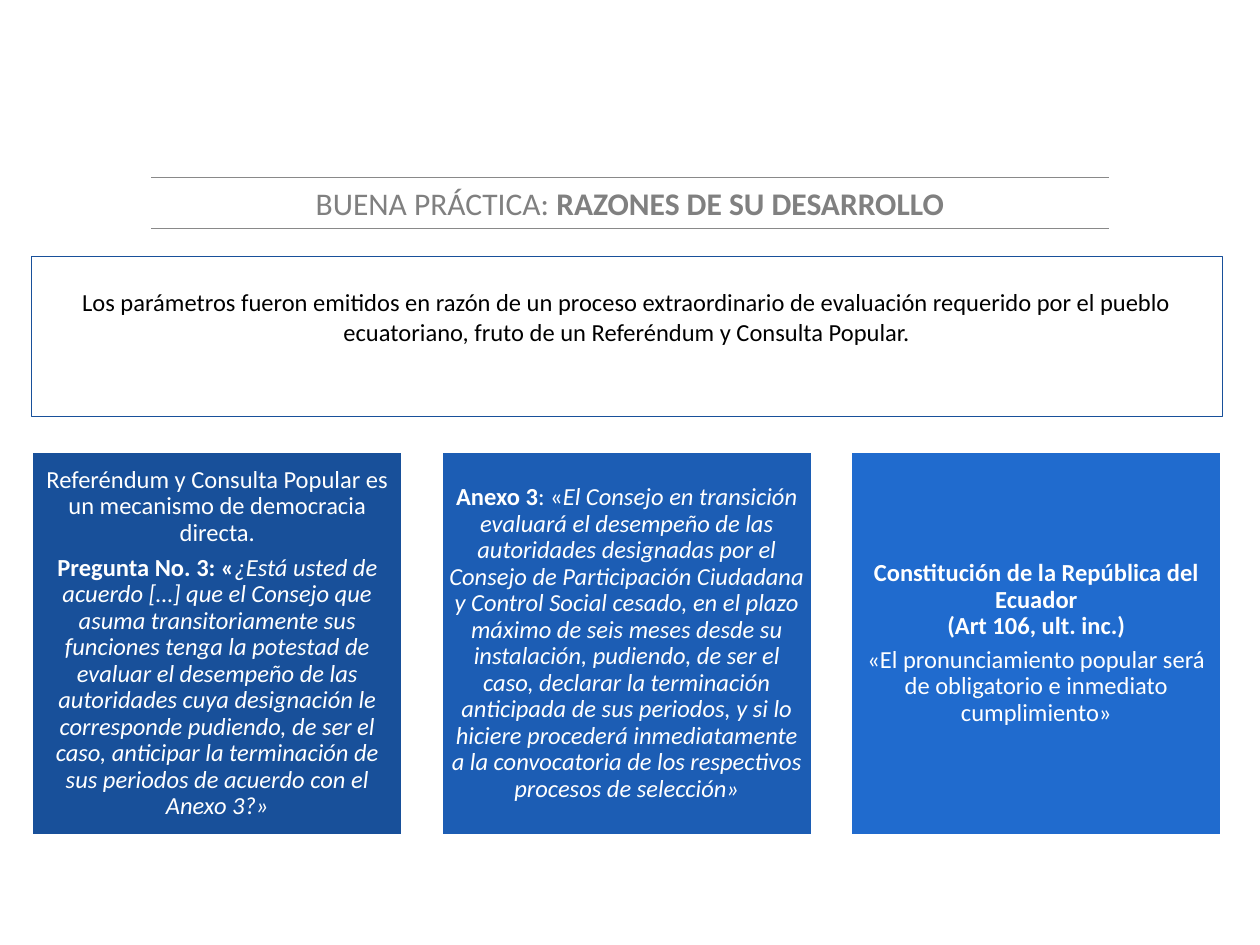
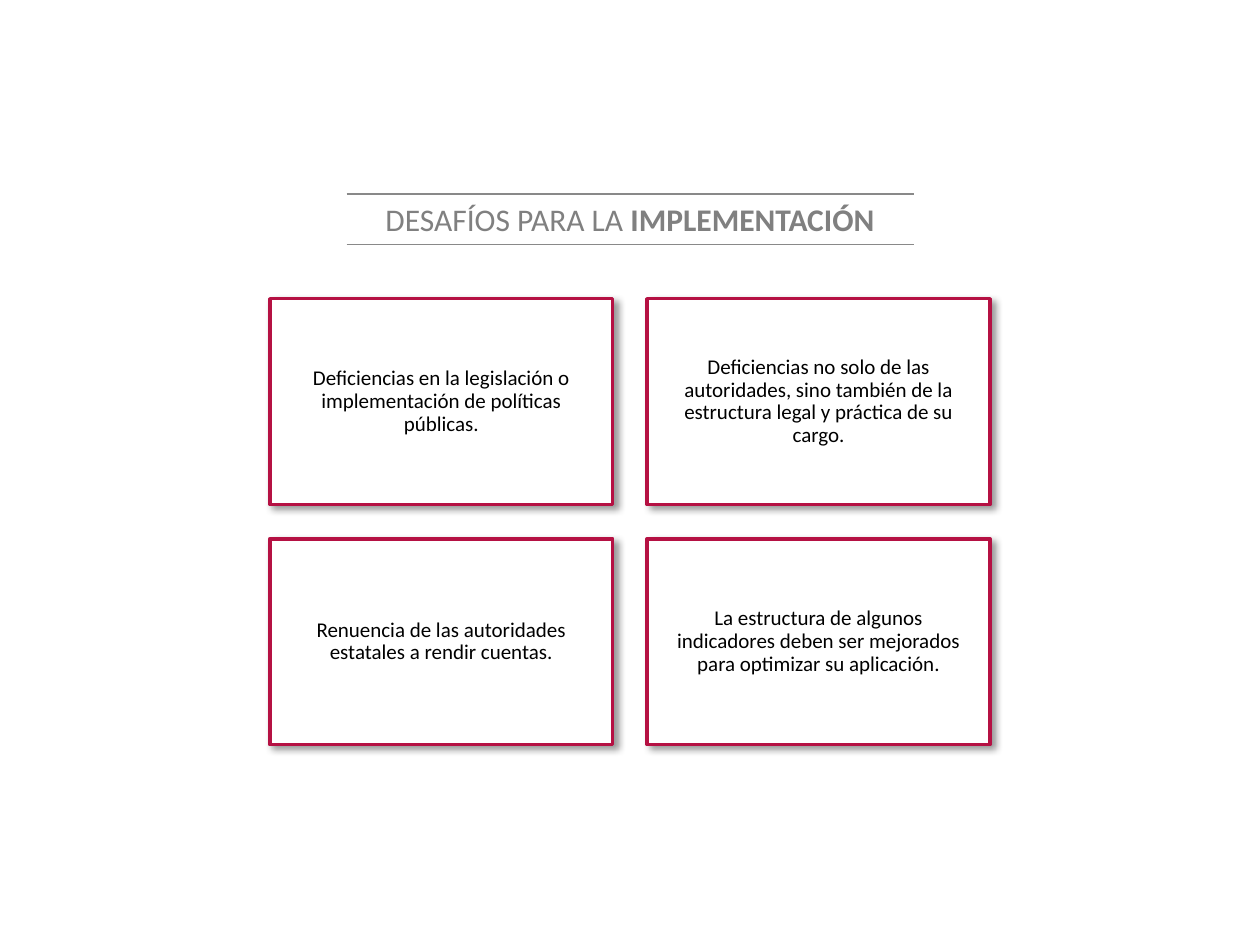
from dataclasses import dataclass

from lxml import etree
from pptx import Presentation
from pptx.dml.color import RGBColor
from pptx.enum.shapes import MSO_CONNECTOR, MSO_SHAPE
from pptx.enum.text import MSO_ANCHOR, PP_ALIGN
from pptx.oxml.ns import qn
from pptx.shapes.autoshape import Shape
from pptx.slide import Slide
from pptx.util import Pt

RECT = MSO_SHAPE.RECTANGLE
LINE = MSO_CONNECTOR.STRAIGHT
TOP, MIDDLE = MSO_ANCHOR.TOP, MSO_ANCHOR.MIDDLE
CENTER = PP_ALIGN.CENTER

FONT = "Calibri"
WIDE, HIGH = 720, 540
COLORS = {
    "white": "FFFFFF",
    "black": "000000",
    "title": "808080",
    "rule": "898989",
    "navy": "18509A",
    "blue": "1C5DB4",
    "sky": "206BCE",
    "red": "B51143",
}


@dataclass
class Words:
    text: str
    bold: bool = False
    italic: bool = False


@dataclass
class Para:
    words: list[Words]
    after: float = 0


@dataclass
class Style:
    fill: str
    edge: str
    width: float
    ink: str
    size: float
    inset: float
    head: float
    anchor: MSO_ANCHOR = MIDDLE
    lead: float = 0.9
    shade: bool = False


@dataclass
class Box:
    left: float
    top: float
    width: float
    height: float


def color(name: str) -> RGBColor:
    return RGBColor.from_string(COLORS[name])


def write(shape: Shape, paras: list[Para], ink: str, size: float, lead: float = 1) -> None:
    frame = shape.text_frame
    frame.word_wrap = True
    for num, para in enumerate(paras):
        line = frame.add_paragraph() if num else frame.paragraphs[0]
        line.alignment = CENTER
        line.line_spacing = lead
        line.space_after = Pt(para.after)
        for words in para.words:
            run = line.add_run()
            run.text = words.text
            run.font.name = FONT
            run.font.size = Pt(size)
            run.font.bold = words.bold
            run.font.italic = words.italic
            run.font.color.rgb = color(ink)


def add_shade(shape: Shape) -> None:
    effects = shape._element.spPr.find(qn("a:effectLst"))
    outer = etree.SubElement(
        effects, qn("a:outerShdw"), blurRad=str(Pt(4)), dist=str(Pt(3)),
        dir=str(45 * 60000), algn="tl", rotWithShape="0",
    )
    tint = etree.SubElement(outer, qn("a:srgbClr"), val=COLORS["black"])
    etree.SubElement(tint, qn("a:alpha"), val="40000")


def add_card(slide: Slide, box: Box, style: Style, paras: list[Para]) -> None:
    card = slide.shapes.add_shape(
        RECT, Pt(box.left), Pt(box.top), Pt(box.width), Pt(box.height)
    )
    card.shadow.inherit = False
    if style.shade:
        add_shade(card)
    card.fill.solid()
    card.fill.fore_color.rgb = color(style.fill)
    card.line.color.rgb = color(style.edge)
    card.line.width = Pt(style.width)
    frame = card.text_frame
    frame.vertical_anchor = style.anchor
    frame.margin_left = frame.margin_right = Pt(style.inset)
    frame.margin_top = frame.margin_bottom = Pt(style.head)
    write(card, paras, style.ink, style.size, style.lead)


def add_title(slide: Slide, plain: str, strong: str, top: float, width: float) -> None:
    left, height = (WIDE - width) / 2, 29.1
    label = slide.shapes.add_textbox(Pt(left), Pt(top), Pt(width), Pt(height))
    write(label, [Para([Words(plain), Words(strong, bold=True)])], "title", 18)
    for level in (top, top + height):
        rule = slide.shapes.add_connector(
            LINE, Pt(left), Pt(level), Pt(left + width), Pt(level)
        )
        rule.line.color.rgb = color("rule")
        rule.line.width = Pt(0.75)
        etree.SubElement(rule._element.spPr, qn("a:effectLst"))


def add_reasons(slide: Slide) -> None:
    add_title(slide, "BUENA PRÁCTICA: ", "RAZONES DE SU DESARROLLO", 101.6, 547.2)
    intro = Style("white", "navy", 0.75, "black", 14, 28, 17.5, TOP, 1)
    add_card(slide, Box(18, 146.7, 680.4, 91.4), intro, [Para([Words(
        "Los parámetros fueron emitidos en razón de un proceso extraordinario de "
        "evaluación requerido por el pueblo ecuatoriano, fruto de un Referéndum y "
        "Consulta Popular."
    )])])
    cards = {
        "navy": [
            Para([Words(
                "Referéndum y Consulta Popular es un mecanismo de democracia directa."
            )], 4.9),
            Para([Words("Pregunta No. 3: «", bold=True), Words(
                "¿Está usted de acuerdo […] que el Consejo que asuma transitoriamente "
                "sus funciones tenga la potestad de evaluar el desempeño de las "
                "autoridades cuya designación le corresponde pudiendo, de ser el caso, "
                "anticipar la terminación de sus periodos de acuerdo con el Anexo 3?»",
                italic=True,
            )]),
        ],
        "blue": [
            Para([Words("Anexo 3", bold=True), Words(": «"), Words(
                "El Consejo en transición evaluará el desempeño de las autoridades "
                "designadas por el Consejo de Participación Ciudadana y Control Social "
                "cesado, en el plazo máximo de seis meses desde su instalación, "
                "pudiendo, de ser el caso, declarar la terminación anticipada de sus "
                "periodos, y si lo hiciere procederá inmediatamente a la convocatoria "
                "de los respectivos procesos de selección»",
                italic=True,
            )]),
        ],
        "sky": [
            Para([Words("Constitución de la República del Ecuador", bold=True)]),
            Para([Words("(Art 106, ult. inc.)", bold=True)], 4),
            Para([Words(
                "«El pronunciamiento popular será de obligatorio e inmediato cumplimiento»"
            )]),
        ],
    }
    width, gap = 212.4, 21.6
    for col, (fill, paras) in enumerate(cards.items()):
        style = Style(fill, "white", 2, "white", 14, 4.2, 4.2)
        box = Box(18 + col * (width + gap), 257.9, width, 219.6)
        add_card(slide, box, style, paras)


def add_hurdles(slide: Slide) -> None:
    add_title(slide, "DESAFÍOS PARA LA ", "IMPLEMENTACIÓN", 110.8, 324)
    texts = [
        "Deficiencias en la legislación o implementación de políticas públicas.",
        "Deficiencias no solo de las autoridades, sino también de la estructura legal "
        "y práctica de su cargo.",
        "Renuencia de las autoridades estatales a rendir cuentas.",
        "La estructura de algunos indicadores deben ser mejorados para optimizar su "
        "aplicación.",
    ]
    style = Style("white", "red", 2, "black", 12, 14.4, 14.4, shade=True)
    width, height, gap = 196, 117.6, 19.6
    left = (WIDE - 2 * width - gap) / 2
    for num, text in enumerate(texts):
        row, col = divmod(num, 2)
        box = Box(left + col * (width + gap), 170.7 + row * (height + gap), width, height)
        add_card(slide, box, style, [Para([Words(text)])])


def main() -> None:
    deck = Presentation()
    deck.slide_width, deck.slide_height = Pt(WIDE), Pt(HIGH)
    for build in (add_reasons, add_hurdles):
        build(deck.slides.add_slide(deck.slide_layouts[6]))
    deck.save("out.pptx")


if __name__ == "__main__":
    main()
